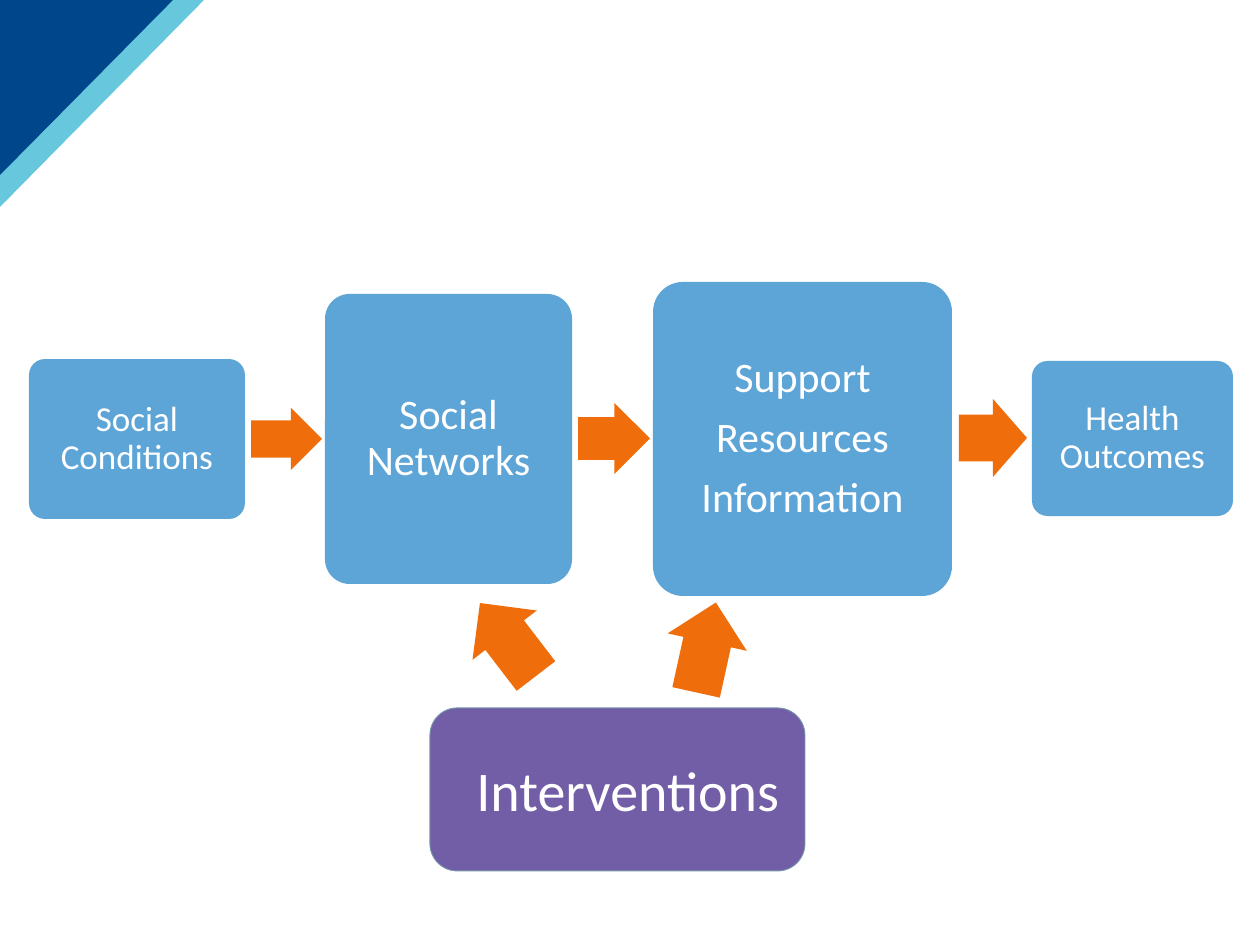
import dataclasses

import pptx
import pptx.dml.color
import pptx.enum.shapes
import pptx.enum.text
import pptx.oxml
import pptx.oxml.ns
import pptx.util

SCALE = 914400 / 126  # EMU in one px
FONT = "Calibri"
BLUE, PURPLE, ORANGE = "5DA4D7", "725DA7", "EF6E0B"
NAVY, TEAL, WHITE, EDGE = "00468B", "00A2C7", "FFFFFF", "7999AC"
SHAPE = pptx.enum.shapes.MSO_SHAPE


@dataclasses.dataclass
class Box:
    left: int
    top: int
    width: int
    height: int
    lines: list[str]
    size: int
    pad: int
    fill: str = BLUE
    edge: str | None = None
    round: float = 0.1
    shift: int = 0  # extra left padding
    space: float = 0.9


@dataclasses.dataclass
class Arrow:
    left: int
    top: int
    width: int
    height: int
    turn: float = 0


BOXES = [
    Box(29, 359, 216, 160, ["Social Conditions"], 20, 15),
    Box(325, 294, 247, 290, ["Social Networks"], 24, 20),
    Box(653, 282, 299, 314, ["Support", "Resources", "Information"], 24, 20),
    Box(1032, 361, 201, 155, ["Health Outcomes"], 20, 15),
    Box(430, 708, 375, 163, ["Interventions"], 32, 13, PURPLE, EDGE, 0.167, 21, 1.0),
]
ARROWS = [
    Arrow(251, 408, 71, 62),
    Arrow(578, 403, 72, 71),
    Arrow(959, 399, 68, 78),
    Arrow(660, 607, 92, 81, 282.4),
    Arrow(462, 599, 92, 81, 232.5),
]


def px(count: int) -> int:
    return round(count * SCALE)


def rgb(code: str) -> pptx.dml.color.RGBColor:
    return pptx.dml.color.RGBColor.from_string(code)


def paint(shape, fill: str, edge: str | None = None) -> None:
    shape.shadow.inherit = False
    shape.fill.solid()
    shape.fill.fore_color.rgb = rgb(fill)
    if edge:
        shape.line.color.rgb = rgb(edge)
        shape.line.width = pptx.util.Pt(0.5)
    else:
        shape.line.fill.background()


def add_shape(slide, kind, item: Box | Arrow):
    return slide.shapes.add_shape(
        kind, px(item.left), px(item.top), px(item.width), px(item.height)
    )


def draw_box(slide, box: Box) -> None:
    shape = add_shape(slide, SHAPE.ROUNDED_RECTANGLE, box)
    shape.adjustments[0] = box.round
    paint(shape, box.fill, box.edge)
    frame = shape.text_frame
    frame.word_wrap = True
    frame.vertical_anchor = pptx.enum.text.MSO_ANCHOR.MIDDLE
    frame.margin_left = px(box.pad + box.shift)
    frame.margin_right = frame.margin_top = frame.margin_bottom = px(box.pad)
    frame.text = "\n".join(box.lines)
    for para in frame.paragraphs:
        para.alignment = pptx.enum.text.PP_ALIGN.CENTER
        para.line_spacing = box.space
        para.space_after = pptx.util.Pt(round(box.size * 0.35, 1))
        para.font.name = FONT
        para.font.size = pptx.util.Pt(box.size)
        para.font.color.rgb = rgb(WHITE)


def draw_arrow(slide, arrow: Arrow) -> None:
    shape = add_shape(slide, SHAPE.RIGHT_ARROW, arrow)
    shape.adjustments[0] = 0.6
    shape.adjustments[1] = 0.5
    shape.rotation = arrow.turn
    paint(shape, ORANGE)


def draw_corner(slide, width: int, height: int, fill: str, alpha: int = 100) -> None:
    """Fill a triangle in the top left corner; alpha is opacity in percent."""
    path = slide.shapes.build_freeform(0, 0, scale=SCALE)
    path.add_line_segments([(width, 0), (0, height)], close=True)
    shape = path.convert_to_shape()
    paint(shape, fill)
    if alpha < 100:
        color = shape.fill._xPr.find(".//" + pptx.oxml.ns.qn("a:srgbClr"))
        tag = pptx.oxml.ns.nsdecls("a")
        color.append(pptx.oxml.parse_xml(f'<a:alpha {tag} val="{alpha * 1000}"/>'))


def main() -> None:
    deck = pptx.Presentation()
    deck.slide_width, deck.slide_height = px(1260), px(945)
    slide = deck.slides.add_slide(deck.slide_layouts[6])
    draw_corner(slide, 204, 207, TEAL, 60)
    draw_corner(slide, 173, 175, NAVY)
    for box in BOXES:
        draw_box(slide, box)
    for arrow in ARROWS:
        draw_arrow(slide, arrow)
    deck.save("out.pptx")


if __name__ == "__main__":
    main()
